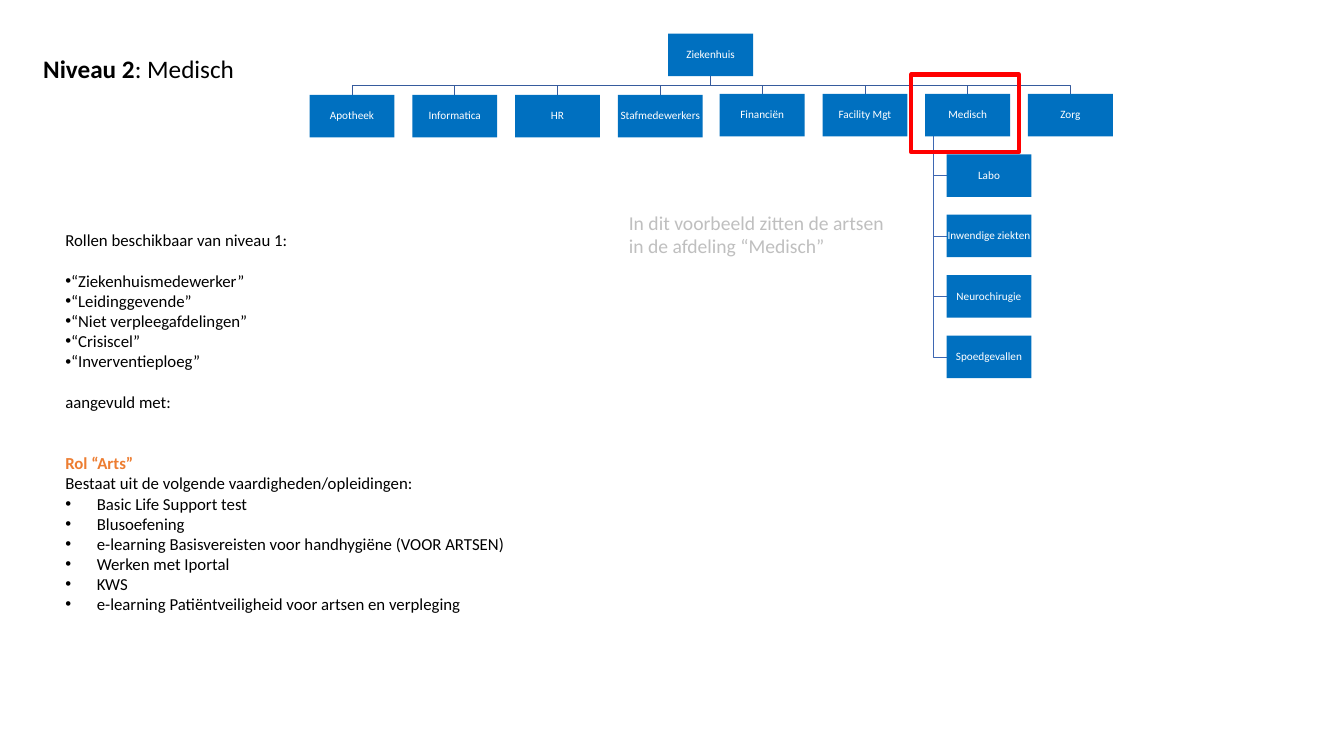
from lxml.etree import SubElement
from pptx import Presentation
from pptx.dml.color import RGBColor
from pptx.enum.shapes import MSO_SHAPE
from pptx.enum.text import MSO_ANCHOR, PP_ALIGN
from pptx.oxml.ns import qn
from pptx.util import Pt

COLORS = {"box": "0070C0", "row": "365B9D", "branch": "3E67B2", "frame": "FF0000",
          "text": "000000", "role": "ED7D31", "note": "BFBFBF", "white": "FFFFFF"}
ROOT = "Ziekenhuis"
# Each half of the row: left, top, departments
HALVES = [
    (221.1, 67.8, ["Apotheek", "Informatica", "HR", "Stafmedewerkers"]),
    (514.1, 67.1, ["Financiën", "Facility Mgt", "Medisch", "Zorg"]),
]
UNITS = ["Labo", "Inwendige ziekten", "Neurochirugie", "Spoedgevallen"]
TITLE = [("Niveau 2", True), (": Medisch", False)]
NOTE = "In dit voorbeeld zitten de artsen in de afdeling “Medisch”"
# Each block: blank lines above, left margin of bullets, heading lines, bullets
BLOCKS = [
    (0, 0, ["Rollen beschikbaar van niveau 1:"], []),
    (1, 0, [], ["“Ziekenhuismedewerker”", "“Leidinggevende”", "“Niet verpleegafdelingen”",
                "“Crisiscel”", "“Inverventieploeg”"]),
    (1, 0, ["aangevuld met:"], []),
    (2, 22.5, ["Rol “Arts”", "Bestaat uit de volgende vaardigheden/opleidingen:"],
     ["Basic Life Support test", "Blusoefening",
      "e-learning Basisvereisten voor handhygiëne (VOOR ARTSEN)", "Werken met Iportal",
      "KWS", "e-learning Patiëntveiligheid voor artsen en verpleging"]),
]
ROLE = "Rol “Arts”"
WIDE, HIGH = 60.7, 30.4
STEP, DROP = 73.4, 43.2
ROOT_X, ROOT_Y = 477.2, 24
UNIT_X, UNIT_Y, SPINE_X = 676.1, 110.2, 666.7
LINE, HANG = 14.65, 22.5

deck = Presentation()
deck.slide_width, deck.slide_height = Pt(960), Pt(540)
slide = deck.slides.add_slide(deck.slide_layouts[6])
shapes = slide.shapes


def paint(color):
    return RGBColor.from_string(COLORS[color])


def style(font, size, color="text", bold=False):
    for key, value in {"name": "Calibri", "size": Pt(size), "bold": bold}.items():
        setattr(font, key, value)
    font.color.rgb = paint(color)


def wire(points, color):
    start, *rest = [(Pt(x), Pt(y)) for x, y in points]
    pen = shapes.build_freeform(*start)
    pen.add_line_segments(rest, close=False)
    line = pen.convert_to_shape()
    line.shadow.inherit = False
    line.fill.background()
    line.line.color.rgb = paint(color)
    line.line.width = Pt(0.5)


def rect(x, y, wide, high):
    shape = shapes.add_shape(MSO_SHAPE.RECTANGLE, Pt(x), Pt(y), Pt(wide), Pt(high))
    shape.shadow.inherit = False
    return shape


def box(name, x, y):
    shape = rect(x, y, WIDE, HIGH)
    shape.fill.solid()
    shape.fill.fore_color.rgb = paint("box")
    shape.line.fill.background()
    frame = shape.text_frame
    for side in ("left", "top", "right", "bottom"):
        setattr(frame, f"margin_{side}", Pt(0.4))
    frame.word_wrap = False
    frame.vertical_anchor = MSO_ANCHOR.MIDDLE
    para = frame.paragraphs[0]
    para.text, para.alignment, para.line_spacing = name, PP_ALIGN.CENTER, 0.9
    style(para.runs[0].font, 8, "white")


def area(x, y, wide, high):
    frame = shapes.add_textbox(Pt(x), Pt(y), Pt(wide), Pt(high)).text_frame
    frame.word_wrap = True
    return frame


def bullet(para, left):
    props = para._p.get_or_add_pPr()
    props.set("marL", str(Pt(left)))
    props.set("indent", str(-Pt(HANG)))
    SubElement(props, qn("a:buFont")).set("typeface", "Arial")
    SubElement(props, qn("a:buChar")).set("char", "•")


# Organisation chart: lines first, boxes on top
row = [(name, left + i * STEP, top)
       for left, top, names in HALVES for i, name in enumerate(names)]
units = [(name, UNIT_X, UNIT_Y + i * DROP) for i, name in enumerate(UNITS)]
mid, foot = ROOT_X + WIDE / 2, ROOT_Y + HIGH
for name, x, y in row:
    bend, end = (foot + y) / 2, x + WIDE / 2
    wire([(mid, foot), (mid, bend), (end, bend), (end, y)], "row")
for name, x, y in units:
    level = y + HIGH / 2
    wire([(SPINE_X, HALVES[1][1] + HIGH), (SPINE_X, level), (x, level)], "branch")
for item in [(ROOT, ROOT_X, ROOT_Y), *row, *units]:
    box(*item)

# Title
para = area(23.8, 34.6, 292.3, 29).paragraphs[0]
for text, bold in TITLE:
    run = para.add_run()
    run.text = text
    style(run.font, 18, bold=bold)

# Frame around the chosen department
mark = rect(650.9, 53.3, 77, 55.4)
mark.fill.background()
mark.line.color.rgb = paint("frame")
mark.line.width = Pt(3)

# Roles and training
body = area(39.6, 160.6, 331.2, 342)
para = body.paragraphs[0]
for gap, left, heads, items in BLOCKS:
    for i, text in enumerate(heads + items):
        if para is None:
            para = body.add_paragraph()
        if i >= len(heads):
            bullet(para, left)
        if gap and i == 0:
            para.space_before = Pt(gap * LINE)
        run = para.add_run()
        run.text = text
        style(run.font, 12, "role" if text == ROLE else "text", text == ROLE)
        para = None

# Side note
para = area(442.1, 146.9, 198.7, 41).paragraphs[0]
para.text = NOTE
style(para.runs[0].font, 14, "note")

deck.save("out.pptx")
